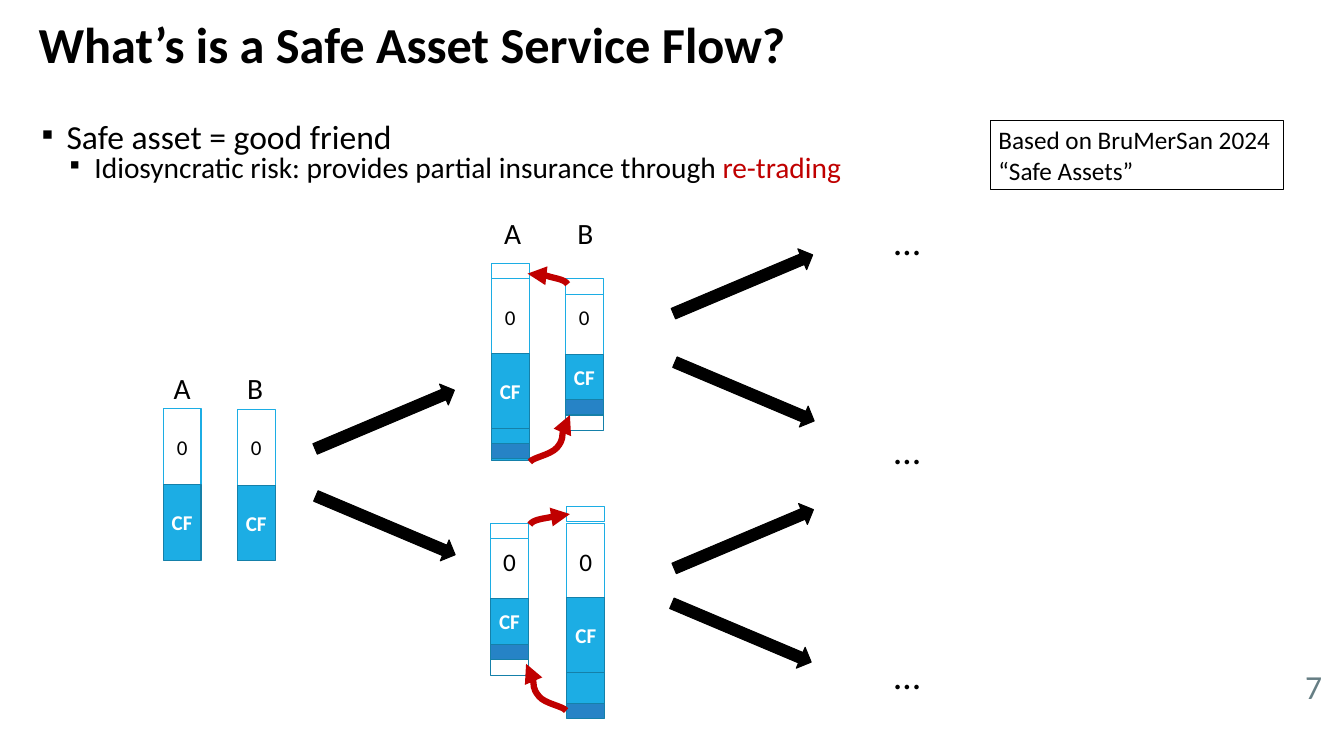
from typing import NamedTuple

from pptx import Presentation, util as u
from pptx.dml.color import RGBColor
from pptx.enum import shapes as sh, text as tx
from pptx.oxml import ns, xmlchemy as xc

PX = 9144  # EMU in one px, 100 px to the inch
FONT = "Calibri"
BLACK, WHITE, RED, GREY = "000000", "FFFFFF", "C00000", "667E84"
SKY, TEAL, BLUE = "1CADE4", "1580A9", "2683C6"
WIDE = 50  # width of every bar


class Bar(NamedTuple):
    top: int
    high: int
    fill: str | None
    edge: str
    word: str = ""
    size: int = 20


class Stack(NamedTuple):
    left: int
    bars: list[Bar]


class Label(NamedTuple):
    left: int
    top: int
    word: str


class Arrow(NamedTuple):
    left: int
    top: int
    turn: float


def zero(top: int, size: int = 20) -> Bar:
    return Bar(top, 100, WHITE, SKY, "0", size)


def cash(top: int, high: int) -> Bar:
    return Bar(top, high, SKY, TEAL, "CF")


def slip(top: int) -> Bar:
    """Thin piece at the head of a bar that changes hands."""
    return Bar(top, 20, WHITE, SKY)


def sold(top: int) -> Bar:
    """Thin piece at the foot of a bar that changes hands."""
    return Bar(top, 20, BLUE, TEAL)


STACKS = [
    Stack(216, [zero(541), cash(641, 100)]),
    Stack(314, [zero(542), cash(642, 100)]),
    Stack(650, [zero(369), Bar(469, 140, SKY, TEAL), cash(467, 100), sold(587), slip(348)]),
    Stack(748, [zero(370), Bar(470, 100, None, TEAL), cash(469, 60), slip(369), sold(529)]),
    Stack(649, [zero(693, 24), Bar(793, 100, None, TEAL), cash(792, 60), slip(693), sold(852)]),
    Stack(750, [zero(692, 24), Bar(792, 140, SKY, TEAL), cash(790, 100), slip(670), sold(930)]),
]
LABELS = [Label(220, 485, "A"), Label(317, 485, "B"),
          Label(657, 279, "A"), Label(754, 279, "B")]
UP, DOWN = -22.9, 22.9
ARROWS = [Arrow(409, 540, UP), Arrow(410, 680, DOWN), Arrow(883, 361, UP),
          Arrow(885, 503, DOWN), Arrow(884, 698, UP), Arrow(881, 822, DOWN)]
# Each trade: a start, then two control points and an end for every curve
TRADES = [
    [(751, 376), (747, 369), (732, 368), (724, 365), (715, 363), (708, 362), (698, 362)],
    [(701, 611), (705, 605), (728, 602), (737, 592), (746, 581), (745, 549), (754, 549)],
    [(701, 694), (705, 687), (720, 686), (729, 684), (738, 682), (745, 680), (754, 680)],
    [(749, 940), (745, 934), (721, 931), (713, 921), (704, 910), (705, 878), (696, 878)],
]


def color(code: str) -> RGBColor:
    return RGBColor.from_string(code)


def child(node, tag: str, **attrs: str):
    item = xc.OxmlElement(tag)
    for key, val in attrs.items():
        item.set(key, val)
    node.append(item)
    return item


def write(para, word: str, size: int, code: str = BLACK, bold: bool = False) -> None:
    run = para.add_run()
    run.text = word
    font = run.font
    font.name, font.size, font.bold = FONT, u.Pt(size), bold
    font.color.rgb = color(code)


def place(shape, left: int, top: int, wide: int, high: int) -> None:
    shape.left, shape.top = left * PX, top * PX
    shape.width, shape.height = wide * PX, high * PX


def block(slide, kind, left: int, top: int, wide: int, high: int,
          fill: str | None, edge: str):
    shape = slide.shapes.add_shape(kind, left * PX, top * PX, wide * PX, high * PX)
    shape.shadow.inherit = False
    if fill:
        shape.fill.solid()
        shape.fill.fore_color.rgb = color(fill)
    else:
        shape.fill.background()
    shape.line.color.rgb = color(edge)
    shape.line.width = u.Pt(1)
    return shape


def field(slide, left: int, top: int, wide: int, high: int, wrap: bool = True):
    frame = slide.shapes.add_textbox(left * PX, top * PX, wide * PX, high * PX).text_frame
    frame.word_wrap = wrap
    return frame


def draw_stack(slide, stack: Stack) -> None:
    for bar in stack.bars:
        shape = block(slide, sh.MSO_SHAPE.RECTANGLE, stack.left, bar.top,
                      WIDE, bar.high, bar.fill, bar.edge)
        if bar.word:
            frame = shape.text_frame
            frame.margin_left = frame.margin_right = 0
            frame.vertical_anchor = tx.MSO_ANCHOR.MIDDLE
            para = frame.paragraphs[0]
            para.alignment = tx.PP_ALIGN.CENTER
            full = bar.fill == SKY
            write(para, bar.word, bar.size, WHITE if full else BLACK, full)


def draw_trade(slide, spots: list[tuple[int, int]]) -> None:
    """Red curve through the spots, with a head at its end."""
    pen = slide.shapes.build_freeform(*spots[0], scale=PX)
    pen.add_line_segments(spots[1:], close=False)
    shape = pen.convert_to_shape()
    shape.shadow.inherit = False
    shape.fill.background()
    shape.line.color.rgb = color(RED)
    shape.line.width = u.Pt(6)
    child(shape.line._get_or_add_ln(), "a:tailEnd", type="triangle")
    steps = list(shape._element.iter(ns.qn("a:lnTo")))
    for at in range(0, len(steps), 3):
        curve = xc.OxmlElement("a:cubicBezTo")
        steps[at].addprevious(curve)
        for step in steps[at:at + 3]:
            curve.append(step[0])
            step.getparent().remove(step)


def draw_point(para, level: int, indent: int, gap: float) -> None:
    """Set up a list line with a square bullet."""
    para.level = level
    para.line_spacing = 0.6
    para.space_before = u.Pt(gap)
    props = para._p.get_or_add_pPr()
    props.set("marL", str(indent * PX))
    props.set("indent", str(-33 * PX))
    child(child(props, "a:buClr"), "a:srgbClr", val=BLACK)
    child(props, "a:buChar", char="▪")


def draw_text(slide) -> None:
    title, body = slide.placeholders
    place(title, 41, 0, 1695, 125)
    title.text_frame.vertical_anchor = tx.MSO_ANCHOR.MIDDLE
    para = title.text_frame.paragraphs[0]
    para.alignment = tx.PP_ALIGN.LEFT
    para.line_spacing = 0.9
    write(para, "What’s is a Safe Asset Service Flow?", 48, bold=True)

    place(body, 45, 167, 1695, 870)
    para = body.text_frame.paragraphs[0]
    draw_point(para, 0, 33, 13.3)
    write(para, "Safe asset = good friend", 32)
    para = body.text_frame.add_paragraph()
    draw_point(para, 1, 70, 6.7)
    write(para, "Idiosyncratic risk: provides partial insurance through ", 28)
    write(para, "re-trading", 28, RED)

    frame = field(slide, 1651, 878, 108, 60)
    frame.vertical_anchor = tx.MSO_ANCHOR.MIDDLE
    frame.paragraphs[0].alignment = tx.PP_ALIGN.RIGHT
    write(frame.paragraphs[0], "7", 32, GREY)

    frame = field(slide, 1173, 283, 252, 650)
    for at, gap in enumerate((0, 156, 171)):
        para = frame.add_paragraph() if at else frame.paragraphs[0]
        para.space_before = u.Pt(gap)
        write(para, "…", 36)

    note = block(slide, sh.MSO_SHAPE.RECTANGLE, 1311, 160, 387, 91, WHITE, BLACK)
    note.text_frame.vertical_anchor = tx.MSO_ANCHOR.TOP
    para = note.text_frame.paragraphs[0]
    para.alignment = tx.PP_ALIGN.LEFT
    write(para, "Based on BruMerSan 2024", 24)
    para.add_line_break()
    write(para, "“Safe Assets”", 24)


def main() -> None:
    deck = Presentation()
    deck.slide_width, deck.slide_height = 1778 * PX, 1000 * PX
    slide = deck.slides.add_slide(deck.slide_layouts[1])
    draw_text(slide)
    for stack in STACKS:
        draw_stack(slide, stack)
    for arrow in ARROWS:
        shape = block(slide, sh.MSO_SHAPE.RIGHT_ARROW, arrow.left, arrow.top,
                      200, 30, BLACK, BLACK)
        shape.rotation = arrow.turn
    for label in LABELS:
        frame = field(slide, label.left, label.top, 42, 57, wrap=False)
        write(frame.paragraphs[0], label.word, 28)
    for trade in TRADES:
        draw_trade(slide, trade)
    deck.save("out.pptx")


if __name__ == "__main__":
    main()
